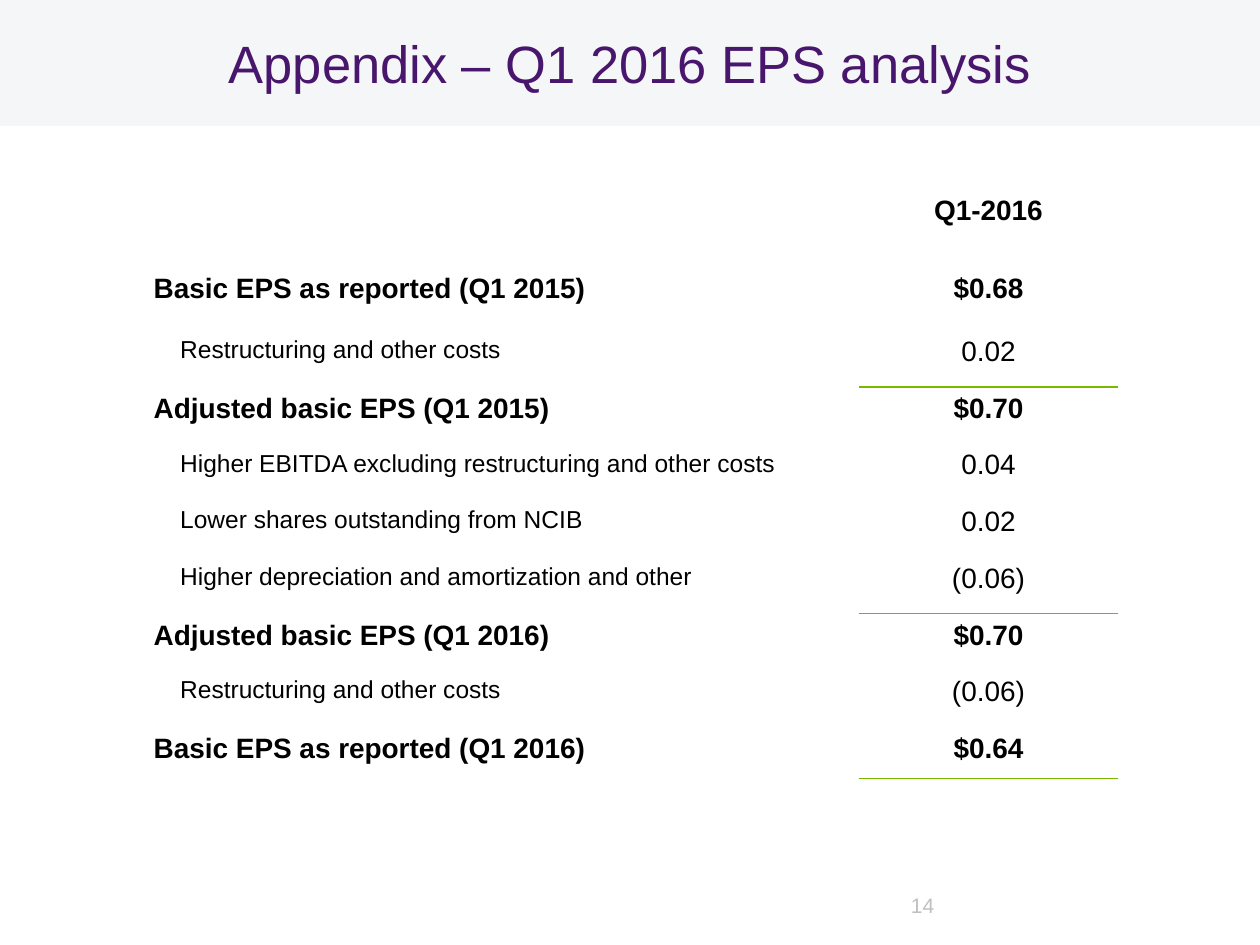
from lxml import etree
from pptx import Presentation
from pptx.dml.color import RGBColor
from pptx.enum.shapes import MSO_SHAPE
from pptx.enum.text import MSO_ANCHOR, PP_ALIGN
from pptx.oxml.ns import qn
from pptx.util import Inches, Pt

RECT = MSO_SHAPE.RECTANGLE
TOP, MIDDLE = MSO_ANCHOR.TOP, MSO_ANCHOR.MIDDLE
LEFT, CENTER = PP_ALIGN.LEFT, PP_ALIGN.CENTER

COLORS = {
    "band": "F5F6F7",
    "title": "49166D",
    "number": "BFBFBF",
    "text": "000000",
    "cell": "FFFFFF",
    "rule": "7AB800",
}
FORMATS = {
    "title": {"size": Pt(30), "bold": False},
    "number": {"size": Pt(12), "bold": False},
    "total": {"size": Pt(16), "bold": True},
    "item": {"size": Pt(14), "bold": False},
    "amount": {"size": Pt(16), "bold": False},
}
COLUMN_WIDTHS = [5.7, 2.05]
ROW_HEIGHTS = [0.62, 0.5] + [0.45] * 7 + [0.41]
ITEM_INDENT = 0.31

# label, value, is a total
EPS_ROWS = [
    ("", "Q1-2016", True),
    ("Basic EPS as reported (Q1 2015)", "$0.68", True),
    ("Restructuring and other costs", "0.02", False),
    ("Adjusted basic EPS (Q1 2015)", "$0.70", True),
    ("Higher EBITDA excluding restructuring and other costs", "0.04", False),
    ("Lower shares outstanding from NCIB", "0.02", False),
    ("Higher depreciation and amortization and other", "(0.06)", False),
    ("Adjusted basic EPS (Q1 2016)", "$0.70", True),
    ("Restructuring and other costs", "(0.06)", False),
    ("Basic EPS as reported (Q1 2016)", "$0.64", True),
]
RULES = {2: "b", 3: "t", 6: "b", 7: "t", 9: "b"}


def rgb(name):
    return RGBColor.from_string(COLORS[name])


def write(tf, text, style, color="text", align=LEFT):
    p = tf.paragraphs[0]
    p.alignment = align
    if not text:
        return
    r = p.add_run()
    r.text = text
    r.font.name = "Arial"
    r.font.color.rgb = rgb(color)
    for name, value in FORMATS[style].items():
        setattr(r.font, name, value)


def set_frame(tf):
    """Wrap the text, centre it vertically and drop the insets."""
    values = {"word_wrap": True, "vertical_anchor": MIDDLE, "margin_left": 0,
              "margin_right": 0, "margin_top": 0, "margin_bottom": 0}
    for name, value in values.items():
        setattr(tf, name, value)


def add_title(slide, text):
    sp = slide.shapes.add_shape(RECT, 0, 0, Inches(10), Inches(1))
    sp.shadow.inherit = False
    sp.fill.solid()
    sp.fill.fore_color.rgb = rgb("band")
    sp.line.fill.background()
    set_frame(sp.text_frame)
    write(sp.text_frame, text, "title", "title", CENTER)


def add_page_number(slide, text):
    sp = slide.shapes.add_textbox(Inches(7.23), Inches(6.86), Inches(2.36), Inches(0.64))
    set_frame(sp.text_frame)
    write(sp.text_frame, text, "number", "number")


def add_rule(cell, side):
    """Draw a 1 pt line on the top ("t") or bottom ("b") of a cell."""
    tc_pr = cell._tc.get_or_add_tcPr()
    ln = etree.SubElement(tc_pr, qn(f"a:ln{side.upper()}"), w=str(Pt(1)))
    fill = etree.SubElement(ln, qn("a:solidFill"))
    etree.SubElement(fill, qn("a:srgbClr"), val=COLORS["rule"])


def fill_cell(cell, text, style, align, side=None):
    if side:
        add_rule(cell, side)
    cell.fill.solid()
    cell.fill.fore_color.rgb = rgb("cell")
    cell.vertical_anchor = TOP
    write(cell.text_frame, text, style, align=align)


def add_eps_table(slide):
    frame = slide.shapes.add_table(
        len(EPS_ROWS), len(COLUMN_WIDTHS), Inches(1.12), Inches(1.5),
        Inches(sum(COLUMN_WIDTHS)), Inches(sum(ROW_HEIGHTS)))
    table = frame.table
    table.first_row = table.horz_banding = False
    for column, width in zip(table.columns, COLUMN_WIDTHS):
        column.width = Inches(width)
    for i, (label, value, is_total) in enumerate(EPS_ROWS):
        table.rows[i].height = Inches(ROW_HEIGHTS[i])
        label_cell, value_cell = table.cell(i, 0), table.cell(i, 1)
        fill_cell(label_cell, label, "total" if is_total else "item", LEFT)
        if not is_total:
            label_cell.margin_left = Inches(ITEM_INDENT)
        fill_cell(value_cell, value, "total" if is_total else "amount", CENTER, RULES.get(i))


def main():
    prs = Presentation()
    prs.slide_width, prs.slide_height = Inches(10), Inches(7.5)
    slide = prs.slides.add_slide(prs.slide_layouts[6])
    add_title(slide, "Appendix – Q1 2016 EPS analysis")
    add_page_number(slide, "14")
    add_eps_table(slide)
    prs.save("out.pptx")


if __name__ == "__main__":
    main()
